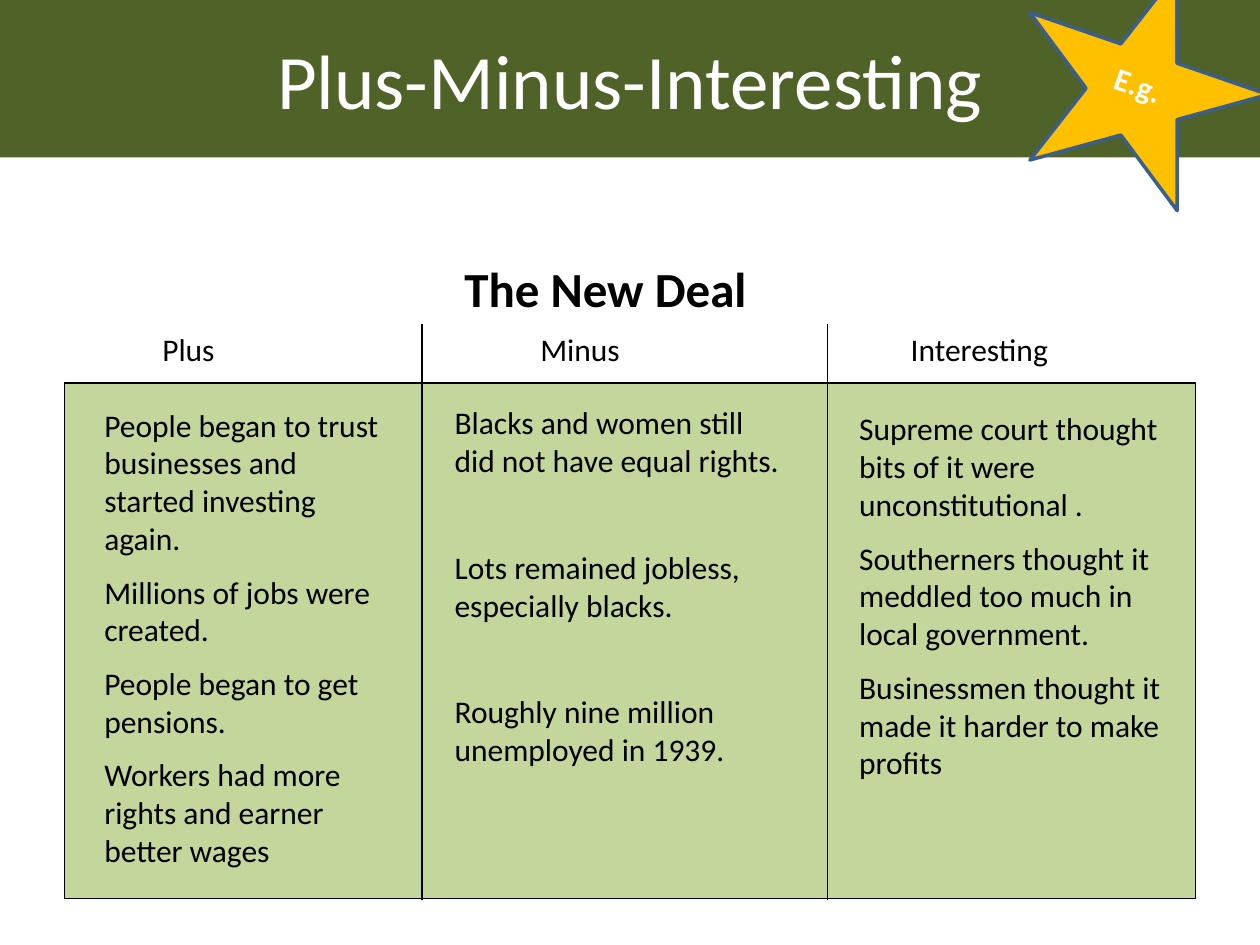
from dataclasses import dataclass

from lxml.etree import SubElement
from pptx import Presentation
from pptx.dml.color import RGBColor
from pptx.enum.shapes import MSO_CONNECTOR, MSO_SHAPE
from pptx.enum.text import MSO_ANCHOR, PP_ALIGN
from pptx.oxml.ns import qn
from pptx.util import Inches, Pt


@dataclass(frozen=True)
class Theme:
    font: str = "Calibri"
    black: str = "000000"
    white: str = "FFFFFF"
    banner: str = "4F6228"
    panel: str = "C3D69B"
    star: str = "FFC000"
    star_edge: str = "3A5F8C"
    banner_size: int = 44
    topic_size: int = 28
    body_size: int = 18
    rule: float = 0.75
    star_rule: float = 2


THEME = Theme()

HEADINGS = (("Plus", 0.68), ("Minus", 3.68), ("Interesting", 6.62))

COLUMNS = (
    ((0.73, 3.17, 2.44, 3.89), 9, (
        "People began to trust businesses and started investing again.",
        "Millions of jobs were created.",
        "People began to get pensions.",
        "Workers had more rights and earner better wages",
    )),
    ((3.51, 3.15, 2.83, 3.13), 39.5, (
        "Blacks and women still did not have equal rights.",
        "Lots remained jobless, especially blacks.",
        "Roughly nine million unemployed in 1939.",
    )),
    ((6.72, 3.2, 2.68, 3.13), 9, (
        "Supreme court thought bits of it were unconstitutional .",
        "Southerners thought it meddled too much in local government.",
        "Businessmen thought it made it harder to make profits",
    )),
)


def color(code):
    return RGBColor.from_string(code)


def write(box, *lines, size=THEME.body_size, ink=THEME.black, bold=False,
          align=PP_ALIGN.LEFT, anchor=MSO_ANCHOR.TOP, gap=0):
    frame = box.text_frame
    frame.word_wrap = True
    frame.vertical_anchor = anchor
    for index, line in enumerate(lines):
        para = frame.add_paragraph() if index else frame.paragraphs[0]
        para.alignment = align
        if index:
            para.space_before = Pt(gap)
        span = para.add_run()
        span.text = line
        span.font.name = THEME.font
        span.font.size = Pt(size)
        span.font.bold = bold
        span.font.color.rgb = color(ink)


def add_text(page, place, *lines, **style):
    box = page.shapes.add_textbox(*map(Inches, place))
    write(box, *lines, **style)
    return box


def add_block(parent, kind, place, fill, edge=None, width=THEME.rule, turn=0):
    block = parent.shapes.add_shape(kind, *map(Inches, place))
    block.shadow.inherit = False
    block.rotation = turn
    block.fill.solid()
    block.fill.fore_color.rgb = color(fill)
    if edge:
        block.line.color.rgb = color(edge)
        block.line.width = Pt(width)
    else:
        block.line.fill.background()
    return block


def add_rule(page, *ends):
    rule = page.shapes.add_connector(MSO_CONNECTOR.STRAIGHT, *map(Inches, ends))
    rule.line.color.rgb = color(THEME.black)
    rule.line.width = Pt(THEME.rule)
    SubElement(rule._element.spPr, qn("a:effectLst"))


def add_headings(page):
    labels = "".join(f"\t{label}" for label, _ in HEADINGS)
    box = add_text(page, (0.51, 2.57, 8.9, 0.44), labels)
    properties = box.text_frame.paragraphs[0]._p.get_or_add_pPr()
    stops = SubElement(properties, qn("a:tabLst"))
    for _, position in HEADINGS:
        SubElement(stops, qn("a:tab"), pos=str(Inches(position)), algn="l")


def add_chart_grid(page):
    add_block(page, MSO_SHAPE.RECTANGLE, (0.51, 3.04, 8.98, 4.09),
              THEME.panel, THEME.black)
    add_rule(page, 0.51, 3.04, 9.41, 3.04)
    for x in (3.35, 6.57):
        add_rule(page, x, 2.57, x, 7.14)


def add_banner(page):
    banner = add_block(page, MSO_SHAPE.RECTANGLE, (0, 0, 10, 1.25), THEME.banner)
    write(banner, "Plus-Minus-Interesting", size=THEME.banner_size,
          ink=THEME.white, align=PP_ALIGN.CENTER, anchor=MSO_ANCHOR.MIDDLE)


def add_star(page):
    badge = page.shapes.add_group_shape()
    add_block(badge, MSO_SHAPE.STAR_5_POINT, (8.05, -0.27, 2, 1.79),
              THEME.star, THEME.star_edge, THEME.star_rule, turn=19)
    label = add_block(badge, MSO_SHAPE.RECTANGLE, (8.74, 0.47, 0.58, 0.41),
                      THEME.star, turn=19)
    write(label, "E.g.", ink=THEME.white, bold=True, align=PP_ALIGN.RIGHT)


def main():
    deck = Presentation()
    deck.slide_width, deck.slide_height = Inches(10), Inches(7.5)
    page = deck.slides.add_slide(deck.slide_layouts[6])
    add_chart_grid(page)
    add_headings(page)
    add_text(page, (2.72, 2, 4.17, 0.57), "The New Deal",
             size=THEME.topic_size, bold=True, align=PP_ALIGN.CENTER)
    for place, gap, points in COLUMNS:
        add_text(page, place, *points, gap=gap)
    add_banner(page)
    add_star(page)
    deck.save("out.pptx")


if __name__ == "__main__":
    main()
